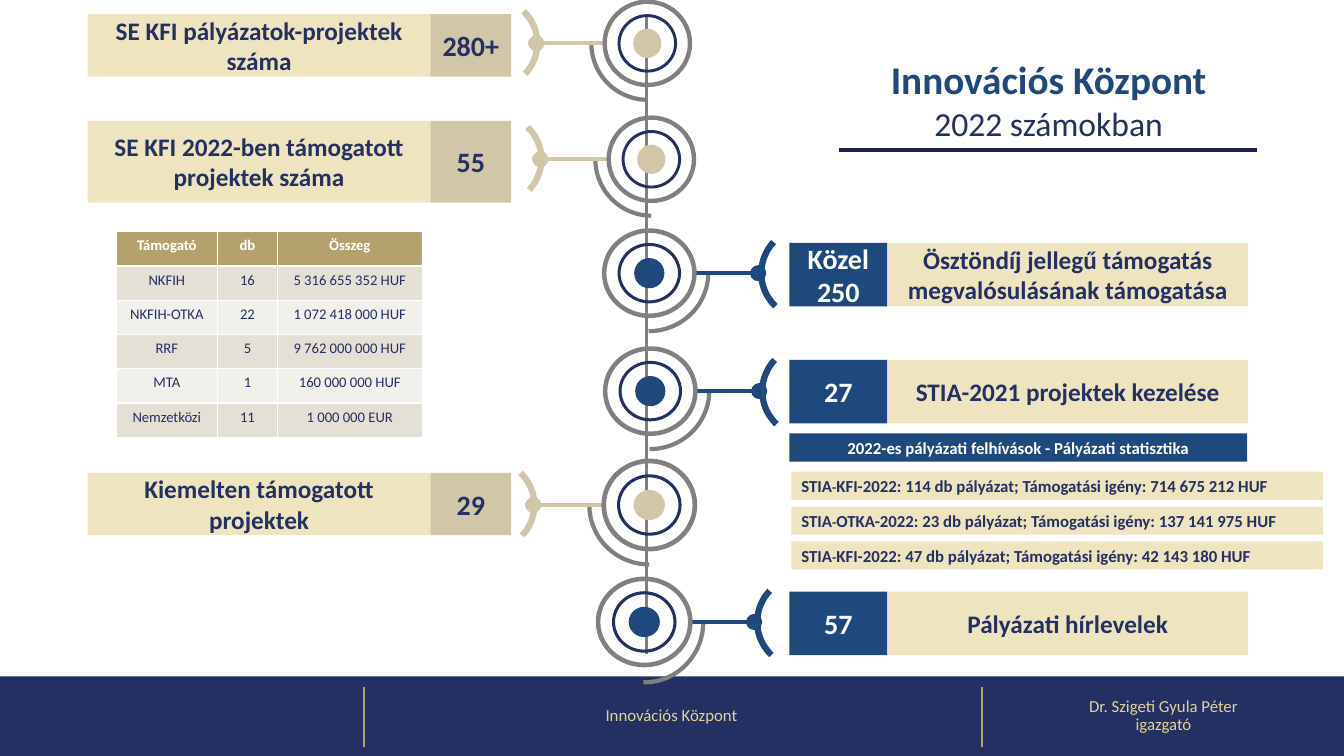
from dataclasses import dataclass

from lxml import etree
from pptx import Presentation
from pptx.dml.color import RGBColor
from pptx.enum.shapes import MSO_CONNECTOR, MSO_SHAPE
from pptx.enum.text import MSO_ANCHOR, MSO_AUTO_SIZE, PP_ALIGN
from pptx.oxml.ns import qn
from pptx.util import Inches, Pt

STRAIGHT = MSO_CONNECTOR.STRAIGHT
RECTANGLE, OVAL, DONUT, ARC = (
    MSO_SHAPE.RECTANGLE, MSO_SHAPE.OVAL, MSO_SHAPE.DONUT, MSO_SHAPE.ARC)
TOP, MIDDLE = MSO_ANCHOR.TOP, MSO_ANCHOR.MIDDLE
NO_AUTOFIT = MSO_AUTO_SIZE.NONE
LEFT, CENTER = PP_ALIGN.LEFT, PP_ALIGN.CENTER

FONT = "Calibri"
COLORS = {
    "navy": "242F62", "rule": "1B234A", "blue": "1F497D", "white": "FFFFFF",
    "sand": "D1C7A8", "cream": "EEE5C0", "gold": "B3A16E", "footer": "E3D496",
    "gray": "7F7F7F", "ring": "808080", "odd": "E5E0D5", "even": "F2F0EB",
}


@dataclass(frozen=True)
class Side:
    direction: int
    color: str
    number_color: str
    sweep: tuple[float, float]
    bracket_turn: float
    bracket_size: float
    bracket_gap: float
    label_left: float
    label_width: float
    number_left: float
    number_width: float


@dataclass(frozen=True)
class Station:
    side: Side
    x: float
    y: float
    tip: float
    ring: tuple[float, float]
    inner: tuple[float, float]
    core: tuple[float, float]
    sweep: tuple[float, float]
    bar_top: float
    bar_height: float
    label: str
    number: str


WEST = Side(-1, "sand", "navy", (56.92, 110.6), 43.6, 0.88, 0.35, 0.87, 3.4, 4.27, 0.8)
EAST = Side(1, "blue", "white", (2.42, 57.32), 223.4, 0.9, 0.4, 8.8, 3.58, 7.83, 0.97)

SMALL = ((0.87, 0.89), (0.58, 0.59), (0.29, 0.28), (1.11, 1.12))
MEDIUM = ((0.89, 0.94), (0.6, 0.63), (0.3, 0.3), (1.17, 1.15))
LARGE = ((0.92, 0.95), (0.61, 0.64), (0.3, 0.31), (1.19, 1.18))
LAST = ((0.9, 0.96), (0.61, 0.64), (0.3, 0.31), (1.17, 1.2))

STATIONS = [
    Station(WEST, 6.42, 0.43, 5.24, *SMALL, 0.14, 0.62,
            "SE KFI pályázatok-projektek száma", "280+"),
    Station(WEST, 6.46, 1.58, 5.28, *SMALL, 1.2, 0.81,
            "SE KFI 2022-ben támogatott projektek száma", "55"),
    Station(EAST, 6.44, 2.71, 7.6, *MEDIUM, 2.41, 0.63,
            "Ösztöndíj jellegű támogatás megvalósulásának támogatása", "Közel 250"),
    Station(EAST, 6.45, 3.88, 7.61, *MEDIUM, 3.57, 0.63,
            "STIA-2021 projektek kezelése", "27"),
    Station(WEST, 6.44, 5.01, 5.21, *LARGE, 4.69, 0.62,
            "Kiemelten támogatott projektek", "29"),
    Station(EAST, 6.39, 6.17, 7.56, *LAST, 5.87, 0.63,
            "Pályázati hírlevelek", "57"),
]
GRANTS = [
    ("Támogató", "db", "Összeg"),
    ("NKFIH", "16", "5 316 655 352 HUF"),
    ("NKFIH-OTKA", "22", "1 072 418 000 HUF"),
    ("RRF", "5", "9 762 000 000 HUF"),
    ("MTA", "1", "160 000 000 HUF"),
    ("Nemzetközi", "11", "1 000 000 EUR"),
]
GRANT_WIDTHS = [1.01, 0.59, 1.44]
ROW_HEIGHT = 0.34
CALLS = [
    "KFI-2022: 114 db pályázat; Támogatási igény: 714 675 212 HUF",
    "OTKA-2022: 23 db pályázat; Támogatási igény: 137 141 975 HUF",
    "KFI-2022: 47 db pályázat; Támogatási igény: 42 143 180 HUF",
]


def rgb(name: str) -> RGBColor:
    return RGBColor.from_string(COLORS[name])


def style(para, size: float, color: str, bold: bool = False, align=CENTER) -> None:
    para.alignment = align
    para.font.name = FONT
    para.font.size = Pt(size)
    para.font.bold = bold
    para.font.color.rgb = rgb(color)


def add_line(page, start: tuple[float, float], end: tuple[float, float],
             color: str, width: float) -> None:
    line = page.shapes.add_connector(STRAIGHT, *map(Inches, start + end))
    line.line.color.rgb = rgb(color)
    line.line.width = Pt(width)
    etree.SubElement(line._element.spPr, qn("a:effectLst"))


def add_filled(page, kind, left: float, top: float, width: float, height: float,
               color: str):
    shape = page.shapes.add_shape(kind, *map(Inches, (left, top, width, height)))
    shape.shadow.inherit = False
    shape.fill.solid()
    shape.fill.fore_color.rgb = rgb(color)
    shape.line.fill.background()
    return shape


def add_round(page, kind, x: float, y: float, size: tuple[float, float], color: str):
    width, height = size
    shape = add_filled(page, kind, x - width / 2, y - height / 2, width, height, color)
    shape.rotation = 270
    return shape


def add_arc(page, x: float, y: float, size: tuple[float, float], turn: float,
            color: str, width: float):
    arc = add_round(page, ARC, x, y, size, color)
    arc.rotation = turn
    arc.fill.background()
    arc.line.color.rgb = rgb(color)
    arc.line.width = Pt(width)
    return arc


def add_bar(page, left: float, top: float, width: float, height: float, fill: str,
            text: str, size: float, color: str, align=CENTER):
    bar = add_filled(page, RECTANGLE, left, top, width, height, fill)
    bar.text_frame.word_wrap = True
    bar.text_frame.vertical_anchor = MIDDLE
    para = bar.text_frame.paragraphs[0]
    para.text = text
    style(para, size, color, True, align)
    return para


def add_station(page, station: Station) -> None:
    side, x, y = station.side, station.x, station.y
    sweep = add_arc(page, x, y, station.sweep, 355.2, "gray", 3)
    sweep.adjustments[0], sweep.adjustments[1] = side.sweep
    edge = x + side.direction * station.ring[0] / 2
    add_line(page, (edge, y), (station.tip, y), side.color, 3)
    add_round(page, OVAL, station.tip - side.direction * 0.08, y, (0.16, 0.16), side.color)
    add_round(page, OVAL, x, y, station.core, side.color)
    for size, color in ((station.inner, "navy"), (station.ring, "ring")):
        add_round(page, DONUT, x, y, size, color).adjustments[0] = 0.05
    add_arc(page, station.tip + side.direction * side.bracket_gap, y,
            (side.bracket_size, side.bracket_size), side.bracket_turn, side.color, 4.5)
    add_bar(page, side.label_left, station.bar_top, side.label_width,
            station.bar_height, "cream", station.label, 18, "navy")
    add_bar(page, side.number_left, station.bar_top, side.number_width,
            station.bar_height, side.color, station.number, 20, side.number_color)


def add_footer(page, left: float, width: float, lines: list[str]) -> None:
    box = page.shapes.add_textbox(*map(Inches, (left, 6.71, width, 0.79)))
    frame = box.text_frame
    frame.word_wrap = True
    frame.vertical_anchor = MIDDLE
    frame.text = "\n".join(lines)
    for para in frame.paragraphs:
        style(para, 12, "footer")
        para.line_spacing = 0.9


def add_title(page) -> None:
    title = page.shapes.title
    title.left, title.top, title.width, title.height = map(Inches, (8.17, 0.45, 4.46, 0.9))
    frame = title.text_frame
    frame.text = "Innovációs Központ\n2022 számokban"
    frame.auto_size = NO_AUTOFIT
    frame.vertical_anchor = TOP
    frame.margin_top = frame.margin_bottom = Inches(0.1)
    style(frame.paragraphs[0], 28, "blue", True)
    style(frame.paragraphs[1], 24, "navy")
    add_line(page, (8.32, 1.49), (12.47, 1.49), "rule", 3)


def add_grants(page) -> None:
    table = page.shapes.add_table(
        len(GRANTS), len(GRANT_WIDTHS), Inches(1.15), Inches(2.3),
        Inches(sum(GRANT_WIDTHS)), Inches(ROW_HEIGHT * len(GRANTS))).table
    for column, width in zip(table.columns, GRANT_WIDTHS):
        column.width = Inches(width)
    for row, values in enumerate(GRANTS):
        fill = "gold" if row == 0 else "odd" if row % 2 else "even"
        for column, value in enumerate(values):
            cell = table.cell(row, column)
            cell.text = value
            cell.fill.solid()
            cell.fill.fore_color.rgb = rgb(fill)
            style(cell.text_frame.paragraphs[0], 10.5, "navy" if row else "white", row == 0)


def add_calls(page) -> None:
    add_bar(page, 7.83, 4.3, 4.54, 0.28, "blue",
            "2022-es pályázati felhívások - Pályázati statisztika", 12, "white")
    for index, call in enumerate(CALLS):
        para = add_bar(page, 7.85, 4.68 + 0.345 * index, 5.27, 0.28, "cream",
                       "STIA", 12, "navy", LEFT)
        hyphen = para.add_run()
        hyphen.text = "-"
        hyphen.font.size = Pt(10)
        para.add_run().text = call


def main() -> None:
    deck = Presentation()
    deck.slide_width, deck.slide_height = Inches(13.33), Inches(7.5)
    page = deck.slides.add_slide(deck.slide_layouts[5])
    add_filled(page, RECTANGLE, 0, 6.71, 13.33, 0.79, "navy")
    for x in (3.61, 9.74):
        add_line(page, (x, 6.82), (x, 7.41), "gold", 1.5)
    add_line(page, (6.41, 6.49), (6.41, 0.15), "gray", 2)
    add_title(page)
    for station in STATIONS:
        add_station(page, station)
    add_grants(page)
    add_calls(page)
    add_footer(page, 3.59, 6.14, ["Innovációs Központ"])
    add_footer(page, 9.74, 3.6, ["Dr. Szigeti Gyula Péter", "igazgató"])
    deck.save("out.pptx")


if __name__ == "__main__":
    main()
